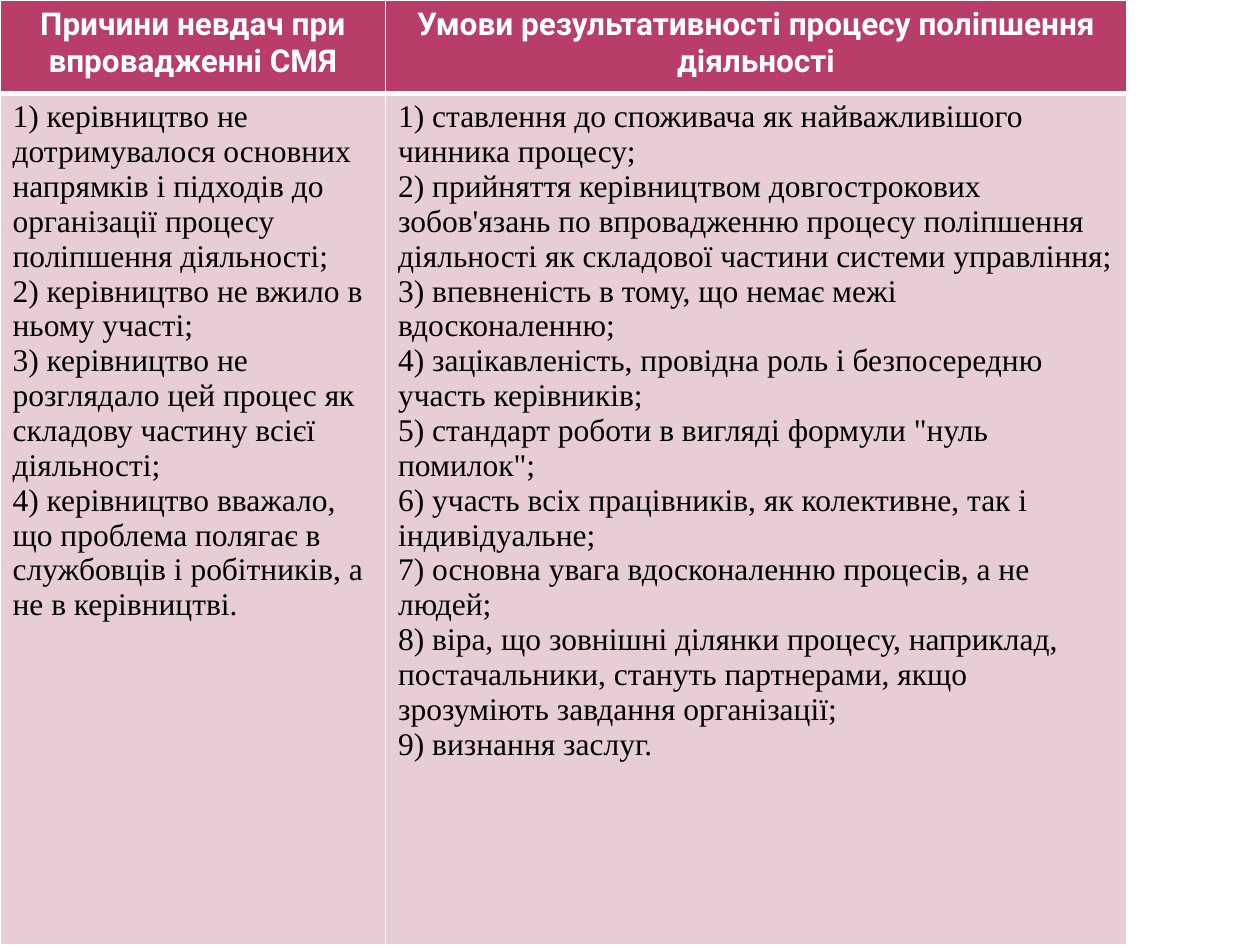
from lxml import etree
from pptx import Presentation
from pptx.dml.color import RGBColor
from pptx.enum.text import PP_ALIGN
from pptx.oxml.ns import qn
from pptx.util import Inches, Pt

CENTER, LEFT = PP_ALIGN.CENTER, PP_ALIGN.LEFT

THEME = {
    "header": {"fill": "B83D68", "align": CENTER,
               "font": {"name": "Roboto", "bold": True, "size": Pt(18)}, "color": "FFFFFF",
               "borders": {"lnL": 1, "lnR": 1, "lnT": 1, "lnB": 3}},
    "body": {"fill": "E6CED4", "align": LEFT,
             "font": {"name": "Times New Roman", "bold": False, "size": Pt(18)}, "color": "000000",
             "borders": {"lnL": 1, "lnR": 1, "lnT": 3, "lnB": 1}},
    "border": "FFFFFF",
}

COLUMNS = [
    (3.06, "Причини невдач при впровадженні СМЯ", [
        "1) керівництво не дотримувалося основних напрямків і підходів до організації процесу поліпшення діяльності;",
        "2) керівництво не вжило в ньому участі;",
        "3) керівництво не розглядало цей процес як складову частину всієї діяльності;",
        "4) керівництво вважало, що проблема полягає в службовців і робітників, а не в керівництві.",
    ]),
    (5.88, "Умови результативності процесу поліпшення діяльності", [
        "1) ставлення до споживача як найважливішого чинника процесу;",
        "2) прийняття керівництвом довгострокових зобов'язань по впровадженню процесу поліпшення діяльності "
        "як складової частини системи управління;",
        "3) впевненість в тому, що немає межі вдосконаленню;",
        "4) зацікавленість, провідна роль і безпосередню участь керівників;",
        "5) стандарт роботи в вигляді формули \"нуль помилок\";",
        "6) участь всіх працівників, як колективне, так і індивідуальне;",
        "7) основна увага вдосконаленню процесів, а не людей;",
        "8) віра, що зовнішні ділянки процесу, наприклад, постачальники, стануть партнерами, "
        "якщо зрозуміють завдання організації;",
        "9) визнання заслуг.",
    ]),
]
ROW_HEIGHTS = [0.74, 6.76]


def add_borders(cell, widths):
    properties = cell._tc.get_or_add_tcPr()
    for side, width in widths.items():
        line = etree.SubElement(properties, qn(f"a:{side}"), w=str(Pt(width)))
        fill = etree.SubElement(line, qn("a:solidFill"))
        etree.SubElement(fill, qn("a:srgbClr"), val=THEME["border"])


def fill_cell(cell, lines, style):
    add_borders(cell, style["borders"])
    cell.fill.solid()
    cell.fill.fore_color.rgb = RGBColor.from_string(style["fill"])
    cell.text_frame.text = "\n".join(lines)
    for para in cell.text_frame.paragraphs:
        para.alignment = style["align"]
        for span in para.runs:
            for name, value in style["font"].items():
                setattr(span.font, name, value)
            span.font.color.rgb = RGBColor.from_string(style["color"])


deck = Presentation()
deck.slide_width, deck.slide_height = Inches(10), Inches(7.5)
page = deck.slides.add_slide(deck.slide_layouts[6])

table_width = sum(width for width, _, _ in COLUMNS)
table = page.shapes.add_table(len(ROW_HEIGHTS), len(COLUMNS), 0, 0,
                              Inches(table_width), Inches(sum(ROW_HEIGHTS))).table
for row, height in zip(table.rows, ROW_HEIGHTS):
    row.height = Inches(height)
for index, (width, heading, points) in enumerate(COLUMNS):
    table.columns[index].width = Inches(width)
    fill_cell(table.cell(0, index), [heading], THEME["header"])
    fill_cell(table.cell(1, index), points, THEME["body"])

deck.save("out.pptx")
